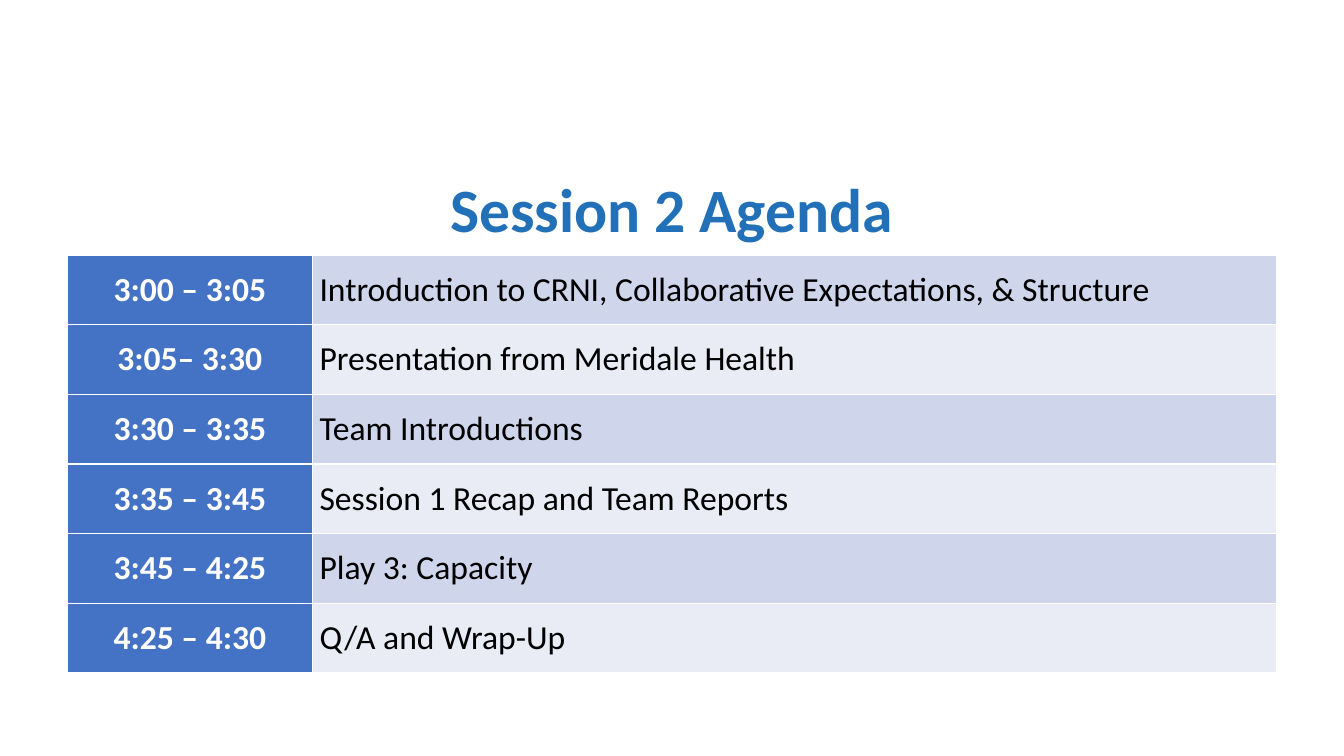
from dataclasses import dataclass

from lxml.etree import SubElement
from pptx import Presentation
from pptx.dml.color import RGBColor as Rgb
from pptx.enum.text import MSO_ANCHOR as Anchor, PP_ALIGN as Align
from pptx.oxml.ns import qn
from pptx.util import Inches, Pt


@dataclass(frozen=True)
class Theme:
    font: str = "Calibri"
    title_size: int = 44
    body_size: int = 24
    title: str = "2270B7"
    time_fill: str = "4472C4"
    bands: tuple = ("CFD5EA", "E9EBF5")
    light: str = "FFFFFF"
    dark: str = "000000"
    border_width: int = 1


class AgendaSlide:
    """Draws agenda elements on a 160 by 90 grid covering the slide."""

    COLUMNS, ROWS = 160, 90

    def __init__(self, deck, theme):
        self.theme = theme
        self.slide = deck.slides.add_slide(deck.slide_layouts[6])
        self.column = deck.slide_width / self.COLUMNS
        self.row = deck.slide_height / self.ROWS

    def place(self, left, top, width, height):
        return (round(left * self.column), round(top * self.row),
                round(width * self.column), round(height * self.row))

    def label(self, frame, wording, size, color, bold, align):
        frame.text = wording
        paragraph = frame.paragraphs[0]
        paragraph.alignment = align
        font = paragraph.runs[0].font
        font.name, font.size, font.bold = self.theme.font, Pt(size), bold
        font.color.rgb = Rgb.from_string(color)
        return paragraph

    def heading(self, wording, *area):
        frame = self.slide.shapes.add_textbox(*self.place(*area)).text_frame
        frame.word_wrap = True
        frame.vertical_anchor = Anchor.MIDDLE
        line = self.label(frame, wording, self.theme.title_size,
                          self.theme.title, True, Align.CENTER)
        line.line_spacing = 0.9

    def cell(self, cell, wording, fill, color, bold, align):
        cell.margin_left = cell.margin_right = Inches(0.07)
        cell.margin_top = cell.margin_bottom = 0
        cell.vertical_anchor = Anchor.MIDDLE
        self.label(cell.text_frame, wording, self.theme.body_size, color, bold, align)
        properties = cell._tc.get_or_add_tcPr()
        for side in ("lnL", "lnR", "lnT", "lnB"):
            border = SubElement(properties, qn(f"a:{side}"),
                                w=str(Pt(self.theme.border_width)))
            paint = SubElement(border, qn("a:solidFill"))
            SubElement(paint, qn("a:srgbClr"), val=self.theme.light)
        cell.fill.solid()
        cell.fill.fore_color.rgb = Rgb.from_string(fill)

    def schedule(self, sessions, time_columns, *area):
        theme = self.theme
        left, top, width, height = self.place(*area)
        table = self.slide.shapes.add_table(
            len(sessions), 2, left, top, width, height).table
        table.first_row = False
        table.columns[0].width = round(time_columns * self.column)
        table.columns[1].width = width - table.columns[0].width
        for index, (time, topic) in enumerate(sessions):
            band = theme.bands[index % len(theme.bands)]
            self.cell(table.cell(index, 0), time, theme.time_fill,
                      theme.light, True, Align.CENTER)
            self.cell(table.cell(index, 1), topic, band,
                      theme.dark, False, Align.LEFT)


def main():
    deck = Presentation()
    deck.slide_width, deck.slide_height = Inches(13.33), Inches(7.5)
    agenda = AgendaSlide(deck, Theme())
    agenda.heading("Session 2 Agenda", 11, 20.25, 138, 10)
    sessions = (
        ("3:00 – 3:05", "Introduction to CRNI, Collaborative Expectations, & Structure"),
        ("3:05– 3:30", "Presentation from Meridale Health"),
        ("3:30 – 3:35", "Team Introductions"),
        ("3:35 – 3:45", "Session 1 Recap and Team Reports"),
        ("3:45 – 4:25", "Play 3: Capacity"),
        ("4:25 – 4:30", "Q/A and Wrap-Up"),
    )
    agenda.schedule(sessions, 29.2, 8, 30.35, 144, 49.8)
    deck.save("out.pptx")


if __name__ == "__main__":
    main()
